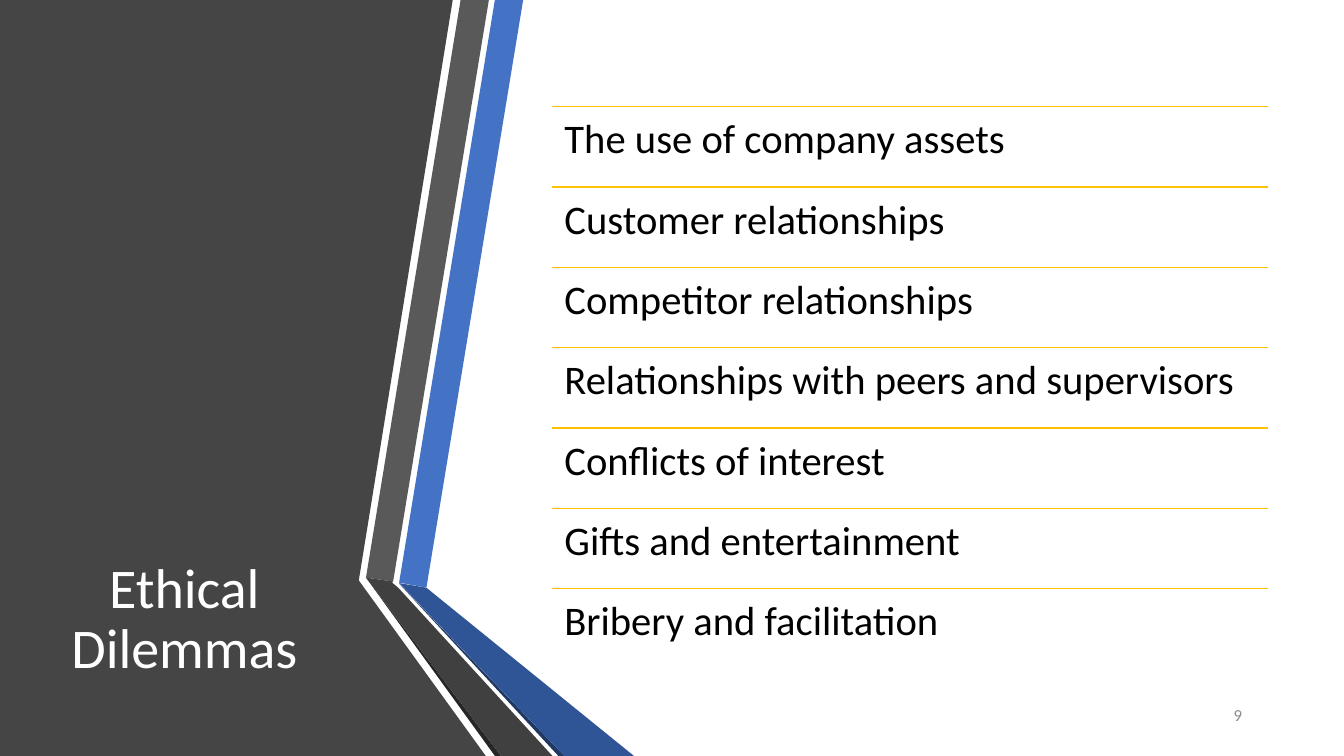
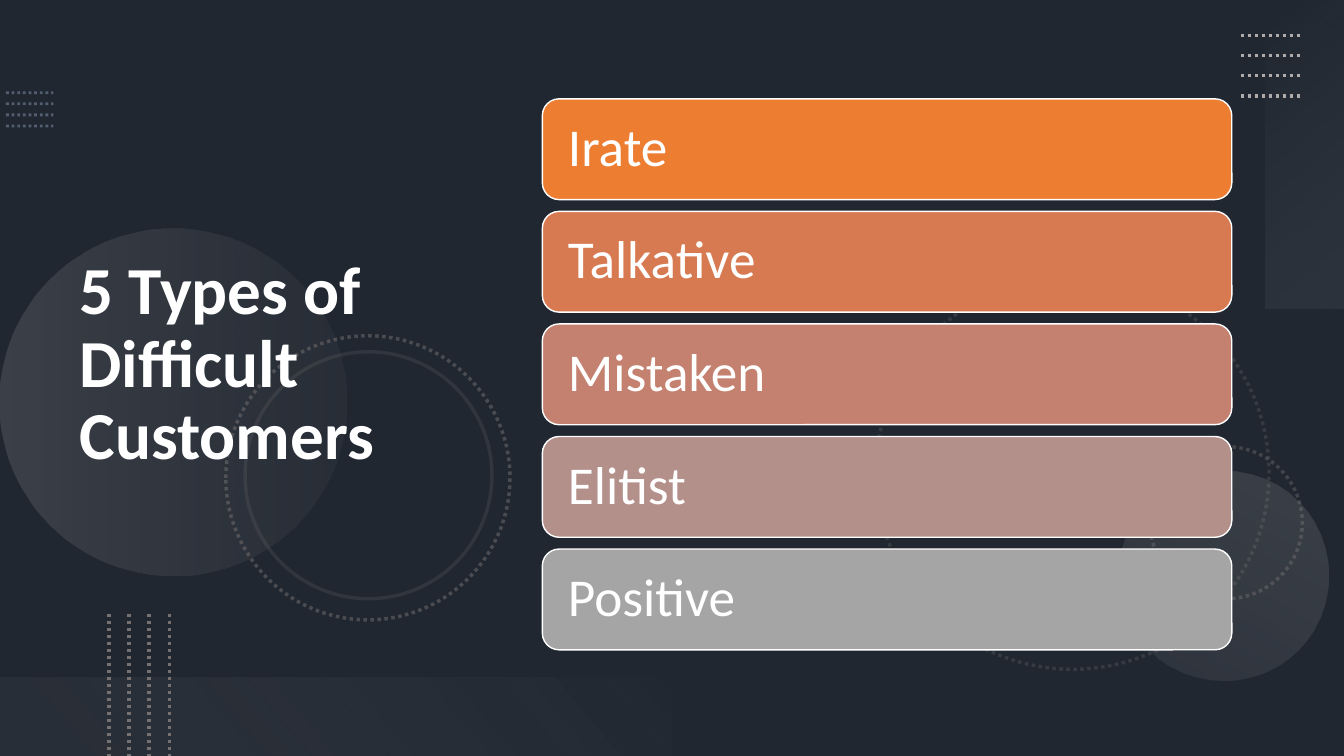
import pptx
import pptx.dml.color
import pptx.enum.dml
import pptx.enum.shapes
import pptx.enum.text
import pptx.oxml
import pptx.oxml.ns
import pptx.util

Pt = pptx.util.Pt
qn = pptx.oxml.ns.qn
SHAPE = pptx.enum.shapes.MSO_SHAPE
ALIGN = pptx.enum.text.PP_ALIGN
ANCHOR = pptx.enum.text.MSO_ANCHOR
DOT = pptx.enum.dml.MSO_LINE.ROUND_DOT
NS = pptx.oxml.ns.nsdecls("a")
WIDTH, HEIGHT = 960, 540
WHITE, GOLD, GREY, SILVER = "FFFFFF", "FFC000", "767171", "AFABAB"
RIBBONS = [
    ("454545", [(0, 0), (323.4, 0), (256.3, 414.6), (347, 540), (0, 540)]),
    ("4472C4", [(285.1, 416.2), (304.6, 419.8), (373.7, 0), (353.5, 0)]),
    ("595959", [(349.2, 0), (329, 0), (261.4, 412.6), (280.8, 415.4)]),
    ("262626", [(261.4, 412.6), (353.5, 540), (357.8, 540)]),
    ("203864", [(285.1, 416.9), (398.9, 540), (403.2, 540)]),
    ("2F5597", [(285.1, 416.5), (403.2, 540), (452.9, 540), (304.6, 419.8)]),
    ("404040", [(394.6, 540), (284.4, 419.8), (280.1, 416.2),
                (280.8, 415.4), (261.4, 412.6), (357.8, 540)]),
]
DILEMMAS = ["The use of company assets", "Customer relationships",
            "Competitor relationships", "Relationships with peers and supervisors",
            "Conflicts of interest", "Gifts and entertainment",
            "Bribery and facilitation"]
CUSTOMERS = [("Irate", "ED7D31"), ("Talkative", "D87A51"), ("Mistaken", "C48170"),
             ("Elitist", "B4908B"), ("Positive", "A5A5A5")]


def rgb(color):
    """Turn a hex string into a colour."""
    return pptx.dml.color.RGBColor.from_string(color)


def assign(target, values):
    """Set each named attribute of the target."""
    for name, value in values.items():
        setattr(target, name, value)


def fade(parent, alpha):
    """Give the solid fill inside an element an opacity in percent."""
    clr = parent.find(qn("a:solidFill")).find(qn("a:srgbClr"))
    clr.append(pptx.oxml.parse_xml(f'<a:alpha {NS} val="{alpha * 1000}"/>'))


class Deck:
    """Holds the style and the current slide."""

    def __init__(self):
        """Start an empty widescreen presentation."""
        self.prs = pptx.Presentation()
        assign(self.prs, {"slide_width": Pt(WIDTH), "slide_height": Pt(HEIGHT)})
        self.s = None

    def slide(self, color):
        """Add a title-only slide with a plain background."""
        self.s = self.prs.slides.add_slide(self.prs.slide_layouts[5])
        self.s.background.fill.solid()
        self.s.background.fill.fore_color.rgb = rgb(color)

    def label(self, sp, text, size, color=WHITE, bold=False, align=ALIGN.LEFT,
              anchor=ANCHOR.MIDDLE, inset=(7.2, 3.6)):
        """Put one formatted paragraph into a shape."""
        dx, dy = (Pt(v) for v in inset)
        tf = sp.text_frame
        assign(tf, {"word_wrap": True, "vertical_anchor": anchor,
                    "auto_size": pptx.enum.text.MSO_AUTO_SIZE.NONE,
                    "margin_left": dx, "margin_right": dx,
                    "margin_top": dy, "margin_bottom": dy})
        p = tf.paragraphs[0]
        p.text = text
        assign(p, {"alignment": align, "line_spacing": 0.9})
        for r in p.runs:
            assign(r.font, {"name": "Calibri", "size": Pt(size), "bold": bold})
            r.font.color.rgb = rgb(color)

    def title(self, text, box, size, **style):
        """Place the title in front of what is already drawn."""
        sp = self.s.shapes.title
        assign(sp, dict(zip(("left", "top", "width", "height"), map(Pt, box))))
        self.s.shapes.element.append(sp.element)
        self.label(sp, text, size, **style)

    def text(self, text, box, size, **style):
        """Add a text box."""
        self.label(self.s.shapes.add_textbox(*map(Pt, box)), text, size, **style)

    def outline(self, sp, color, width, dash=None, alpha=None):
        """Format a line or the border of a shape."""
        sp.line.color.rgb = rgb(color)
        assign(sp.line, {"width": Pt(width), "dash_style": dash})
        if alpha:
            fade(sp.element.spPr.find(qn("a:ln")), alpha)

    def line(self, start, end, color, width, dash=None, alpha=None):
        """Add a straight line."""
        c = self.s.shapes.add_connector(
            pptx.enum.shapes.MSO_CONNECTOR.STRAIGHT, *map(Pt, start + end))
        self.outline(c, color, width, dash, alpha)
        c.element.spPr.append(pptx.oxml.parse_xml(f"<a:effectLst {NS}/>"))

    def polygon(self, points, color):
        """Add a filled outline without a border."""
        points = [(Pt(x), Pt(y)) for x, y in points]
        fb = self.s.shapes.build_freeform(*points[0], scale=1.0)
        fb.add_line_segments(points[1:])
        self.paint(fb.convert_to_shape(), color)

    def paint(self, sp, color=None, alpha=None):
        """Fill a shape, drop its shadow and its border."""
        sp.shadow.inherit = False
        sp.line.fill.background()
        if color is None:
            sp.fill.background()
            return
        sp.fill.solid()
        sp.fill.fore_color.rgb = rgb(color)
        if alpha:
            fade(sp.element.spPr, alpha)

    def shape(self, kind, box, color=None, alpha=None):
        """Add a preset shape."""
        sp = self.s.shapes.add_shape(kind, *map(Pt, box))
        self.paint(sp, color, alpha)
        return sp

    def ring(self, left, top, size, alpha, dash=None):
        """Add an open circle with a faint outline."""
        sp = self.shape(SHAPE.OVAL, (left, top, size, size))
        self.outline(sp, GREY, 2.5, dash, alpha)

    def glow(self, kind, box, rotation, angle, stops):
        """Add a shape with a translucent gradient."""
        sp = self.shape(kind, box)
        sp.rotation = rotation
        gs = "".join(
            f'<a:gs pos="{pos * 1000}"><a:srgbClr val="{color}">'
            f'<a:alpha val="{alpha * 1000}"/></a:srgbClr></a:gs>'
            for pos, color, alpha in stops)
        grad = pptx.oxml.parse_xml(
            f'<a:gradFill {NS} rotWithShape="1"><a:gsLst>{gs}</a:gsLst>'
            f'<a:lin ang="{angle * 60000}" scaled="0"/></a:gradFill>')
        pr = sp.element.spPr
        pr.replace(pr.find(qn("a:noFill")), grad)


def dilemmas(d):
    """Build the list of ethical dilemmas."""
    d.slide(WHITE)
    for color, points in RIBBONS:
        d.polygon(points, color)
    d.title("Ethical Dilemmas", (10, 360.7, 243.4, 164.9), 40, align=ALIGN.CENTER)
    d.text("9", (808.6, 496.8, 85.7, 28.8), 12, color="8C8C8C", align=ALIGN.RIGHT)
    left, top, width, step = 394.6, 76.2, 511.2, 57.38
    for i, text in enumerate(DILEMMAS):
        y = top + i * step
        d.line((left, y), (left + width, y), GOLD, 1)
        d.text(text, (left, y, width, step), 29, color="000000",
               anchor=ANCHOR.TOP, inset=(8.6, 8.6))


def customers(d):
    """Build the list of difficult customers."""
    d.slide("44546A")
    d.shape(SHAPE.RECTANGLE, (0, 0, WIDTH, HEIGHT), "000000", 53)
    for i in range(4):
        y = 66.2 + i * 7.92
        d.line((4.3, y), (38.2, y), "8497B0", 2, DOT, 50)
    d.ring(625.7, 197.3, 280.8, 25, DOT)
    d.ring(821.5, 319, 108.7, 40, DOT)
    d.glow(SHAPE.OVAL, (0, 163.4, 247.7, 247.7), 270, 90,
           [(0, SILVER, 20), (100, GREY, 10)])
    d.glow(SHAPE.OVAL, (799.2, 336.2, 149.8, 149.8), 210, 90,
           [(0, SILVER, 10), (100, SILVER, 20)])
    d.ring(161.3, 239.8, 203, 50, DOT)
    d.ring(175, 251.3, 176.4, 20)
    d.glow(SHAPE.RECTANGLE, (822.2, 82.1, 220.3, 56.2), 270, 140,
           [(0, "F5F5F5", 0), (100, SILVER, 10)])
    for i in range(4):
        y = 25.2 + i * 14.4
        d.line((886.3, y), (929.5, y), SILVER, 2.5, DOT)
    d.glow(SHAPE.RECTANGLE, (0, 483.8, 480, 56.2), 180, 140,
           [(10, GREY, 10), (100, "F1F0F0", 0)])
    for i in range(4):
        x = 77.8 + i * 14.4
        d.line((x, 438.5), (x, HEIGHT), GREY, 2.5, DOT)
    d.title("5 Types of \vDifficult Customers", (49.7, 38.9, 330.5, 444.2), 48,
            bold=True)
    for i, (text, color) in enumerate(CUSTOMERS):
        sp = d.shape(SHAPE.ROUNDED_RECTANGLE, (387.4, 70.6 + i * 80.4, 492.5, 72), color)
        d.outline(sp, WHITE, 1)
        d.label(sp, text, 38, inset=(14.8, 11.5))


def main():
    """Build and save the presentation."""
    d = Deck()
    dilemmas(d)
    customers(d)
    d.prs.save("out.pptx")


if __name__ == "__main__":
    main()
